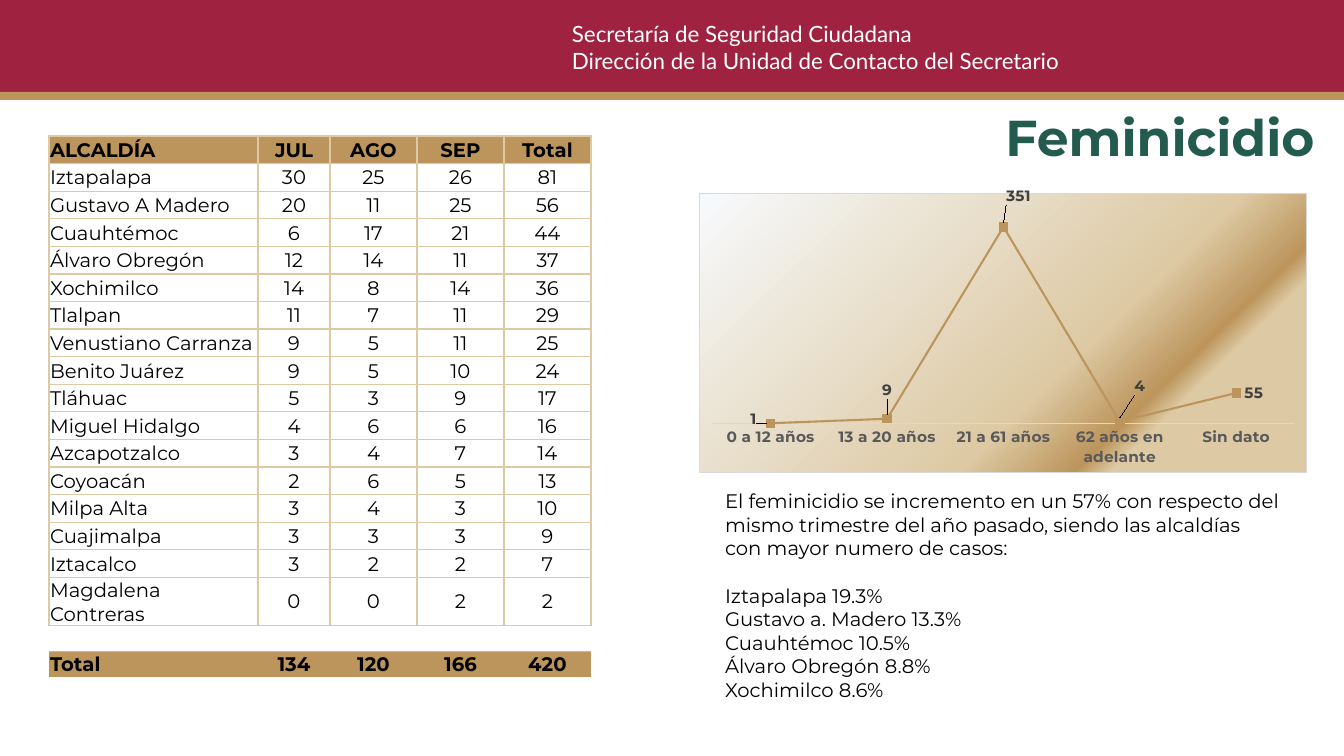
"""Build the Feminicidio slide: cases by borough, cases by age and a summary."""
import lxml.etree
import pptx
import pptx.chart.data
import pptx.dml.color
import pptx.enum.chart
import pptx.enum.shapes
import pptx.enum.text
import pptx.oxml
import pptx.oxml.ns
import pptx.util

COLORS = {"wine": "9F2241", "gold": "BC955C", "sand": "DDC9A3", "green": "235B4E",
          "outline": "561222", "white": "FFFFFF", "black": "000000", "blue": "9BC2E6",
          "axis": "D9D9D9", "category": "595959", "label": "404040", "pale": "F7FAFD"}
OFFICE = ["Secretaría de Seguridad Ciudadana",
          "Dirección de la Unidad de Contacto del Secretario"]
TITLE = "Feminicidio"
SUMMARY = ["El feminicidio se incremento en un 57% con respecto del mismo trimestre "
           "del año pasado, siendo las alcaldías con mayor numero de casos:",
           "Iztapalapa 19.3%", "Gustavo a. Madero 13.3%", "Cuauhtémoc 10.5%",
           "Álvaro Obregón 8.8%", "Xochimilco 8.6%"]
ROWS = [
    ("ALCALDÍA", "JUL", "AGO", "SEP", "Total"),
    ("Iztapalapa", 30, 25, 26, 81),
    ("Gustavo A Madero", 20, 11, 25, 56),
    ("Cuauhtémoc", 6, 17, 21, 44),
    ("Álvaro Obregón", 12, 14, 11, 37),
    ("Xochimilco", 14, 8, 14, 36),
    ("Tlalpan", 11, 7, 11, 29),
    ("Venustiano Carranza", 9, 5, 11, 25),
    ("Benito Juárez", 9, 5, 10, 24),
    ("Tláhuac", 5, 3, 9, 17),
    ("Miguel Hidalgo", 4, 6, 6, 16),
    ("Azcapotzalco", 3, 4, 7, 14),
    ("Coyoacán", 2, 6, 5, 13),
    ("Milpa Alta", 3, 4, 3, 10),
    ("Cuajimalpa", 3, 3, 3, 9),
    ("Iztacalco", 3, 2, 2, 7),
    ("Magdalena Contreras", 0, 0, 2, 2),
    ("", "", "", "", ""),
    ("Total", 134, 120, 166, 420),
]
COLUMNS = [209, 72, 87, 87, 87]
AGES = {"0 a 12 años": 1, "13 a 20 años": 9, "21 a 61 años": 351,
        "62 años en adelante": 4, "Sin dato": 55}
LABELS = [("LEFT", -6, -5), ("ABOVE", 0, -12), ("ABOVE", 15, -14),
          ("ABOVE", 20, -19), ("RIGHT", 0, 0)]
GRADIENT = [(0, "pale"), (61, "sand"), (74, "gold"), (78, "sand"), (100, "sand")]
CHART = (699, 186, 608, 287)
PLOT = (13, 6, 583, 231)

Pt = pptx.util.Pt
qn = pptx.oxml.ns.qn
ALIGN = pptx.enum.text.PP_ALIGN
ANCHOR = pptx.enum.text.MSO_ANCHOR


def px(n):
    return pptx.util.Emu(round(n * 914400 / 100.8))


def rgb(name):
    return pptx.dml.color.RGBColor.from_string(COLORS[name])


def style(font, color, **values):
    for key, value in values.items():
        setattr(font, key, value)
    font.color.rgb = rgb(color)


def xml(tag, body):
    names = pptx.oxml.ns.nsdecls("a", "c")
    return pptx.oxml.parse_xml(f"<{tag} {names}>{body}</{tag}>")


def solid(color):
    return f'<a:solidFill><a:srgbClr val="{COLORS[color]}"/></a:solidFill>'


def place(sp, *box):
    for key, value in zip(("left", "top", "width", "height"), box):
        setattr(sp, key, px(value))


def write(tf, lines, color, **font):
    tf.word_wrap = True
    tf.vertical_anchor = ANCHOR.TOP
    for i, line in enumerate(lines):
        p = tf.paragraphs[0] if i == 0 else tf.add_paragraph()
        r = p.add_run()
        r.text = line
        style(r.font, color, **font)


def add_band(s, top, height, color):
    sp = s.shapes.add_shape(pptx.enum.shapes.MSO_SHAPE.RECTANGLE,
                            0, px(top), px(1344), px(height))
    sp.shadow.inherit = False
    sp.fill.solid()
    sp.fill.fore_color.rgb = rgb(color)
    sp.line.fill.background()


def set_borders(cell, row):
    edges = dict.fromkeys("LRTB", ("sand", 1))
    if row == len(ROWS) - 2:
        edges = {"T": ("sand", 1), "B": ("blue", 0.5)}
    elif row == len(ROWS) - 1:
        edges = {"T": ("blue", 0.5)}
    tcPr = cell._tc.get_or_add_tcPr()
    for i, side in enumerate("LRTB"):
        color, width = edges.get(side, (None, 1))
        ln = xml(f"a:ln{side}", solid(color) if color else "<a:noFill/>")
        ln.set("w", str(Pt(width)))
        tcPr.insert(i, ln)


def add_cases_table(s):
    table = s.shapes.add_table(len(ROWS), len(COLUMNS), px(49), px(136),
                               px(sum(COLUMNS)), px(521)).table
    table.first_row = table.horz_banding = False
    for column, width in zip(table.columns, COLUMNS):
        column.width = px(width)
    for i, row in enumerate(ROWS):
        table.rows[i].height = px(26 if i >= len(ROWS) - 2 else 469 / 17)
        strong = i in (0, len(ROWS) - 1)
        for j, value in enumerate(row):
            cell = table.cell(i, j)
            for side, margin in zip(("left", "right", "top", "bottom"), (1, 1, 1, 0)):
                setattr(cell, f"margin_{side}", px(margin))
            cell.vertical_anchor = ANCHOR.MIDDLE
            p = cell.text_frame.paragraphs[0]
            p.alignment = ALIGN.CENTER if j else ALIGN.LEFT
            if value == "":
                p._p.append(xml("a:endParaRPr", ""))
                p._p[-1].set("sz", "1400")
            else:
                r = p.add_run()
                r.text = str(value)
                style(r.font, "black", name="Montserrat", size=Pt(14), bold=strong)
            if strong:
                cell.fill.solid()
                cell.fill.fore_color.rgb = rgb("gold")
            else:
                cell.fill.background()
            set_borders(cell, i)


def manual_layout(x, y, extra=""):
    return xml("c:layout", f'<c:manualLayout>{extra}<c:x val="{x / CHART[2]:.4f}"/>'
               f'<c:y val="{y / CHART[3]:.4f}"/></c:manualLayout>')


def add_age_chart(s):
    data = pptx.chart.data.CategoryChartData()
    data.categories = list(AGES)
    data.add_series("Series 1", list(AGES.values()))
    chart = s.shapes.add_chart(pptx.enum.chart.XL_CHART_TYPE.LINE_MARKERS,
                               *map(px, CHART), data).chart
    chart.has_legend = chart.has_title = False
    font = {"name": "Montserrat", "size": Pt(11), "bold": True}
    style(chart.font, "black", **font)
    axis = chart.category_axis
    axis.major_tick_mark = pptx.enum.chart.XL_TICK_MARK.NONE
    style(axis.tick_labels.font, "category", **font)
    axis.format.line.color.rgb = rgb("axis")
    axis.format.line.width = Pt(0.75)
    values = chart.value_axis
    values.visible = values.has_major_gridlines = False
    values.minimum_scale, values.maximum_scale = 0, 400

    plot = chart.plots[0]
    plot.vary_by_categories = False
    series = plot.series[0]
    series.smooth = False
    series.format.line.color.rgb = rgb("gold")
    series.format.line.width = Pt(1.5)
    marker = series.marker
    marker.style = pptx.enum.chart.XL_MARKER_STYLE.SQUARE
    marker.size = 6
    marker.format.fill.solid()
    marker.format.fill.fore_color.rgb = rgb("gold")
    marker.format.line.color.rgb = rgb("gold")
    series.data_labels.show_value = True
    style(series.data_labels.font, "label", **font)
    for i, (position, dx, dy) in enumerate(LABELS):
        label = series.points[i].data_label
        style(label.font, "label", **font)
        label.position = getattr(pptx.enum.chart.XL_LABEL_POSITION, position)
        label._dLbl.insert(1, manual_layout(dx, dy))

    area = chart._chartSpace.chart.plotArea
    for old in area.findall(qn("c:layout")):
        area.remove(old)
    layout = manual_layout(*PLOT[:2], '<c:layoutTarget val="inner"/>'
                           '<c:xMode val="edge"/><c:yMode val="edge"/>')
    for tag, size, whole in zip("wh", PLOT[2:], CHART[2:]):
        layout[0].append(xml(f"c:{tag}", ""))
        layout[0][-1].set("val", f"{size / whole:.4f}")
    area.insert(0, layout)
    stops = "".join(f'<a:gs pos="{at * 1000}"><a:srgbClr val="{COLORS[color]}"/></a:gs>'
                    for at, color in GRADIENT)
    chart._chartSpace.chart.addnext(xml(
        "c:spPr", f'<a:gradFill><a:gsLst>{stops}</a:gsLst><a:lin ang="2700000" scaled="0"/>'
        f'</a:gradFill><a:ln w="9525">{solid("axis")}</a:ln>'))


def main():
    prs = pptx.Presentation()
    prs.slide_width, prs.slide_height = px(1344), px(756)
    s = prs.slides.add_slide(prs.slide_layouts[1])
    add_band(s, 0, 92, "wine")
    add_band(s, 92, 8, "gold")
    office = s.shapes.add_textbox(px(562), px(15), px(672), px(65))
    write(office.text_frame, OFFICE, "white", name="Lato", size=Pt(16))

    title, body = s.placeholders
    place(title, 993, 101, 334, 72)
    write(title.text_frame, [TITLE], "green", name="Montserrat", size=Pt(36), bold=True)
    title.text_frame.word_wrap = False
    p = title.text_frame.paragraphs[0]
    p.alignment = ALIGN.CENTER
    outline = xml("a:ln", solid("outline"))
    outline.set("w", "9525")
    p.runs[0].font._element.insert(0, outline)

    place(body, 715, 484, 577, 248)
    write(body.text_frame, SUMMARY, "black", name="Montserrat", size=Pt(14))
    body.text_frame.auto_size = pptx.enum.text.MSO_AUTO_SIZE.NONE
    for i, p in enumerate(body.text_frame.paragraphs):
        pPr = p._p.get_or_add_pPr()
        pPr.set("marL", "0")
        pPr.set("indent", "0")
        pPr.append(xml("a:buNone", ""))
        p.space_before = Pt(17 if i == 1 else 0)
    add_cases_table(s)
    add_age_chart(s)
    prs.save("out.pptx")


if __name__ == "__main__":
    main()
